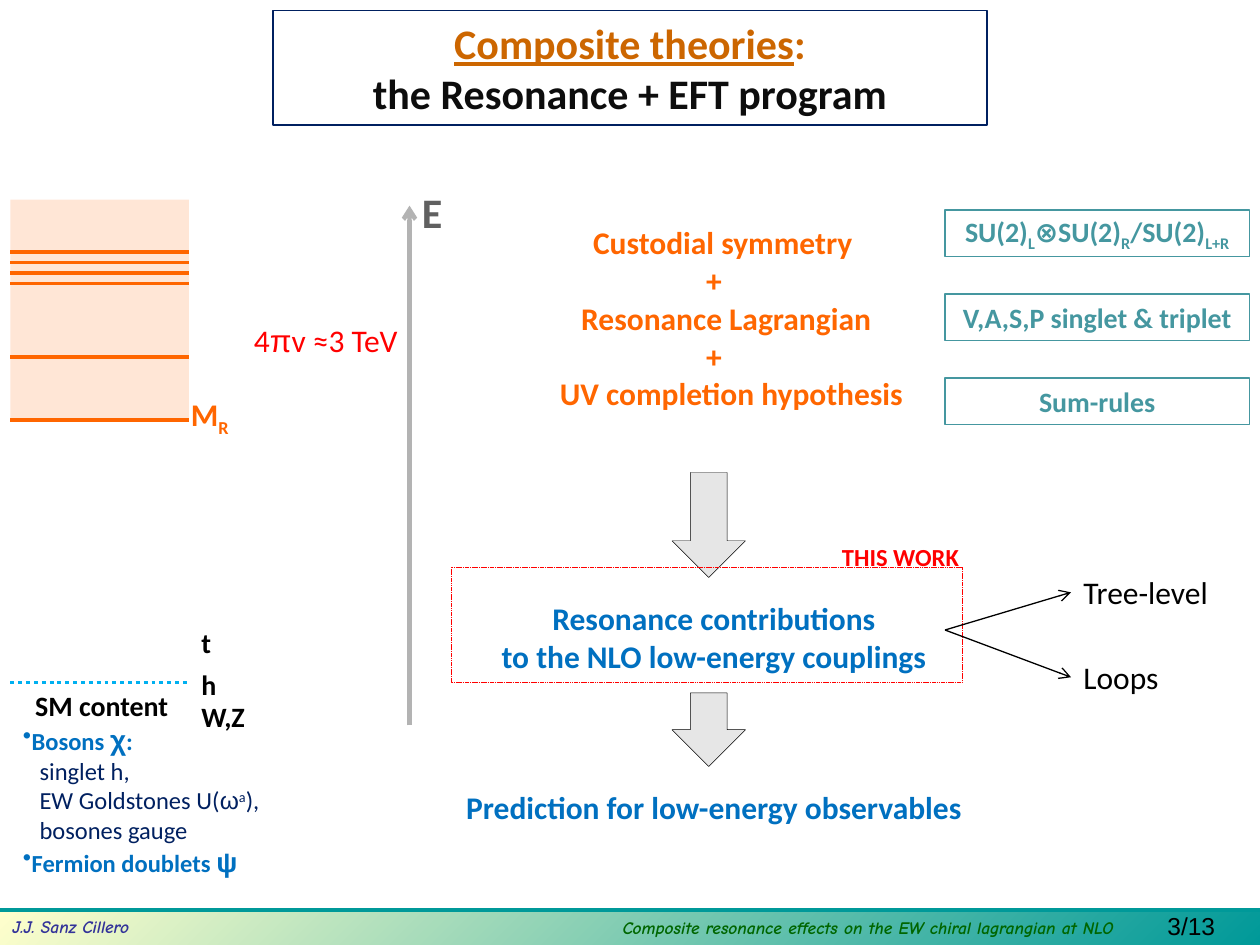
import pptx
import pptx.util
import pptx.dml.color
import pptx.enum.dml
import pptx.enum.shapes
import pptx.enum.text
import pptx.oxml
import pptx.oxml.ns
from lxml import etree

Pt = pptx.util.Pt
RGB = pptx.dml.color.RGBColor
SHAPE = pptx.enum.shapes.MSO_SHAPE
DASH = pptx.enum.dml.MSO_LINE
LEFT, CENTER = pptx.enum.text.PP_ALIGN.LEFT, pptx.enum.text.PP_ALIGN.CENTER
qn = pptx.oxml.ns.qn

BLACK = RGB(0x00, 0x00, 0x00)
INK = RGB(0x0D, 0x0D, 0x0D)
NAVY = RGB(0x00, 0x20, 0x60)
BLUE = RGB(0x00, 0x70, 0xC0)
SKY = RGB(0x00, 0xB0, 0xF0)
ORANGE = RGB(0xFF, 0x66, 0x00)
OCHRE = RGB(0xCC, 0x66, 0x00)
RED = RGB(0xFF, 0x00, 0x00)
TEAL = RGB(0x45, 0x97, 0xA0)
BAND_TEAL = RGB(0x00, 0x99, 0x99)
CREAM = RGB(0xFF, 0xFF, 0xCC)
INDIGO = RGB(0x33, 0x33, 0x99)
GREEN = RGB(0x00, 0x66, 0x00)
LIGHT_GREY = RGB(0xE6, 0xE6, 0xE6)
AXIS_GREY = RGB(0xB3, 0xB3, 0xB3)
DARK_GREY = RGB(0x60, 0x60, 0x60)

SUB = {"baseline": -25}
SUPER = {"baseline": 30}
GREEK = {"name": "Arial"}
LARGE_GREEK = {"name": "Arial", "size": Pt(16)}


def write(paragraph, pieces, size, color, bold=False, italic=False,
          font="Calibri", align=LEFT):
    """Fill a paragraph; a piece is a string or (string, font overrides)."""
    paragraph.alignment = align
    paragraph.font.name, paragraph.font.size = font, Pt(size)
    paragraph.font.bold, paragraph.font.italic = bold, italic
    paragraph.font.color.rgb = color
    for piece in [pieces] if isinstance(pieces, str) else pieces:
        text, changes = (piece, {}) if isinstance(piece, str) else piece
        run = paragraph.add_run()
        run.text = text
        for key, value in changes.items():
            if key == "baseline":
                run._r.get_or_add_rPr().set("baseline", str(value * 1000))
            else:
                setattr(run.font, key, value)


def next_paragraph(frame, index):
    return frame.add_paragraph() if index else frame.paragraphs[0]


def add_frame(slide, box):
    frame = slide.shapes.add_textbox(*map(Pt, box)).text_frame
    frame.word_wrap = True
    return frame


def add_label(slide, box, pieces, size, color, **style):
    write(add_frame(slide, box).paragraphs[0], pieces, size, color, **style)


def add_block(slide, box, kind=SHAPE.RECTANGLE, fill=None, line=None, weight=0.75):
    block = slide.shapes.add_shape(kind, *map(Pt, box))
    block.shadow.inherit = False
    if fill is None:
        block.fill.background()
    else:
        block.fill.solid()
        block.fill.fore_color.rgb = fill
    if line is None:
        block.line.fill.background()
    else:
        block.line.color.rgb, block.line.width = line, Pt(weight)
    return block


def add_line(slide, start, end, color, weight, dash=None, arrow=False):
    line = slide.shapes.add_connector(
        pptx.enum.shapes.MSO_CONNECTOR.STRAIGHT, *map(Pt, start + end))
    line.line.color.rgb, line.line.width = color, Pt(weight)
    if dash:
        line.line.dash_style = dash
    if arrow:
        etree.SubElement(line.line._get_or_add_ln(), qn("a:tailEnd"), type="arrow")
    etree.SubElement(line._element.spPr, qn("a:effectLst"))


def place_title(slide, box):
    title = slide.shapes.title
    title.left, title.top, title.width, title.height = map(Pt, box)
    title.line.color.rgb, title.line.width = NAVY, Pt(0.75)
    frame = title.text_frame
    frame.auto_size = pptx.enum.text.MSO_AUTO_SIZE.NONE
    frame.vertical_anchor = pptx.enum.text.MSO_ANCHOR.MIDDLE
    rows = [([("Composite theories", {"underline": True}), ":"], OCHRE),
            ("the Resonance + EFT program", INK)]
    for index, (pieces, color) in enumerate(rows):
        paragraph = next_paragraph(frame, index)
        paragraph.space_before = Pt(0)
        write(paragraph, pieces, 24, color, bold=True, align=CENTER)


def place_footer(slide, box):
    left, top, width, height = box
    band = add_block(slide, box)
    band.fill.gradient()
    band.fill.gradient_angle = 315
    for stop, color in zip(band.fill.gradient_stops, (CREAM, BAND_TEAL)):
        stop.color.rgb = color
    add_line(slide, (left, top), (left + width, top), BAND_TEAL, 1.75)
    comic = {"bold": True, "italic": True, "font": "Comic Neue"}
    add_label(slide, (left, top, 200, height), "J.J. Sanz Cillero", 10, INDIGO, **comic)
    add_label(slide, (left + 322, top + 0.5, 348, height),
              "Composite resonance effects on the EW chiral lagrangian at NLO",
              10, GREEN, align=CENTER, **comic)
    add_label(slide, (left + 660, top - 3, 60, height), "3/13", 14, BLACK, font="Arial")


def place_spectrum(slide, box):
    """Resonance levels in a tinted band, whose lowest level is M_R."""
    left, top, width, height = box
    for rise in (96, 90, 84, 78, 36, 0):
        y = top + height - rise
        add_line(slide, (left, y), (left + width, y), ORANGE, 2.25)
    tint = add_block(slide, box, fill=ORANGE)
    color = tint.fill._xPr.find(qn("a:solidFill"))[0]
    etree.SubElement(color, qn("a:alpha"), val="16000")
    add_label(slide, (left + width - 6, top + height - 18, 54, 29),
              ["M", ("R", SUB)], 18, ORANGE, bold=True)


def place_sm_content(slide, box):
    left, top, width, height = box
    add_line(slide, (left, top), (left + 102, top), SKY, 2.25, dash=DASH.ROUND_DOT)
    for particle, offset in (("t", -36), ("h", -12), ("W,Z", 6)):
        add_label(slide, (left + 102, top + offset, 72, 26.5), particle, 16, BLACK, bold=True)
    # Rows: pieces, size, colour, bold, left margin, bullet
    rows = [
        ("SM content", 16, BLACK, True, 7, False),
        (["Bosons ", ("χ", LARGE_GREEK), ":"], 14, BLUE, True, 4.5, True),
        ("singlet h,", 14, NAVY, False, 9.5, False),
        (["EW Goldstones U(", ("ω", GREEK), ("a", SUPER), "),"], 14, NAVY, False, 9.5, False),
        ("bosones gauge", 14, NAVY, False, 9.5, False),
        (["Fermion doublets ", ("ψ", LARGE_GREEK)], 14, BLUE, True, 4.5, True),
    ]
    frame = add_frame(slide, box)
    for index, (pieces, size, color, bold, margin, bullet) in enumerate(rows):
        paragraph = next_paragraph(frame, index)
        properties = paragraph._p.get_or_add_pPr()
        properties.set("marL", str(Pt(margin)))
        if bullet:
            properties.set("indent", str(-Pt(margin)))
            etree.SubElement(properties, qn("a:buChar"), char="•")
        write(paragraph, pieces, size, color, bold=bold)


def place_energy_axis(slide, box):
    left, top, width, height = box
    add_line(slide, (left, top + height), (left, top), AXIS_GREY, 2.5, arrow=True)
    add_label(slide, (left, top - 14.5, width, 36), "E", 24, DARK_GREY, bold=True)
    add_label(slide, (left - 96, top + 62.5, 108, 29),
              ["4", ("π", GREEK), "v ≈3 TeV"], 18, RED)


def place_program(slide, box):
    """Steps from the hypotheses to the prediction, with arrows between."""
    left, top, width, height = box
    middle = left + width / 2
    # Steps: text, colour, space before, left margin
    steps = [
        ("Custodial symmetry", ORANGE, 0, 10),
        ("+", ORANGE, 0, 0),
        ("Resonance Lagrangian", ORANGE, 0, 14),
        ("+", ORANGE, 0, 0),
        ("UV completion hypothesis", ORANGE, 0, 20),
        ("Resonance contributions", BLUE, 107, 0),
        ("to the NLO low-energy couplings", BLUE, 0, 0),
        ("Prediction for low-energy observables", BLUE, 64.5, 0),
    ]
    frame = add_frame(slide, box)
    for index, (text, color, space, margin) in enumerate(steps):
        paragraph = next_paragraph(frame, index)
        paragraph.space_before = Pt(space)
        paragraph._p.get_or_add_pPr().set("marL", str(Pt(margin)))
        write(paragraph, text, 18, color, bold=True, align=CENTER)
    for offset, length in ((146, 60), (272, 42)):
        add_block(slide, (middle - 24, top + offset, 42, length), SHAPE.DOWN_ARROW,
                  fill=LIGHT_GREY, line=BLACK, weight=0.25)


def place_ingredients(slide, box):
    left, top, width, height = box
    ingredients = [
        ["SU(2)", ("L", SUB), "⊗SU(2)", ("R", SUB), "/SU(2)", ("L+R", SUB)],
        "V,A,S,P singlet & triplet",
        "Sum-rules",
    ]
    row_height = 26.5
    pitch = (height - row_height) / (len(ingredients) - 1)
    for index, pieces in enumerate(ingredients):
        row = add_block(slide, (left, top + index * pitch, width, row_height), line=TEAL)
        write(row.text_frame.paragraphs[0], pieces, 16, TEAL, bold=True, align=CENTER)


def place_this_work(slide, box):
    left, top, width, height = box
    outline = add_block(slide, box, line=RED, weight=0.25)
    outline.line.dash_style = DASH.SQUARE_DOT
    add_label(slide, (left + 216, top - 18, 84, 24.5), "THIS WORK", 14, RED, bold=True)
    # Branches to the two orders
    origin = (left + 282, top + 36)
    for order, y in (("Tree-level", top + 14.5), ("Loops", top + 63)):
        add_line(slide, origin, (left + 354, y), BLACK, 0.75, arrow=True)
        add_label(slide, (left + 354, y - 14.5, 100, 29), order, 18, BLACK)


def main():
    deck = pptx.Presentation()
    deck.slide_width, deck.slide_height = Pt(720), Pt(540)
    slide = deck.slides.add_slide(deck.slide_layouts[5])
    place_footer(slide, (0, 520, 720, 20))
    place_title(slide, (156, 6, 408, 65.5))
    place_program(slide, (108, 124, 600, 354))
    place_spectrum(slide, (6, 114, 102, 126))
    place_sm_content(slide, (6, 390, 198, 116.5))
    place_energy_axis(slide, (234, 117.5, 30, 297))
    place_ingredients(slide, (540, 120, 174, 122.5))
    place_this_work(slide, (258, 324, 292, 66))
    deck.save("out.pptx")


if __name__ == "__main__":
    main()
